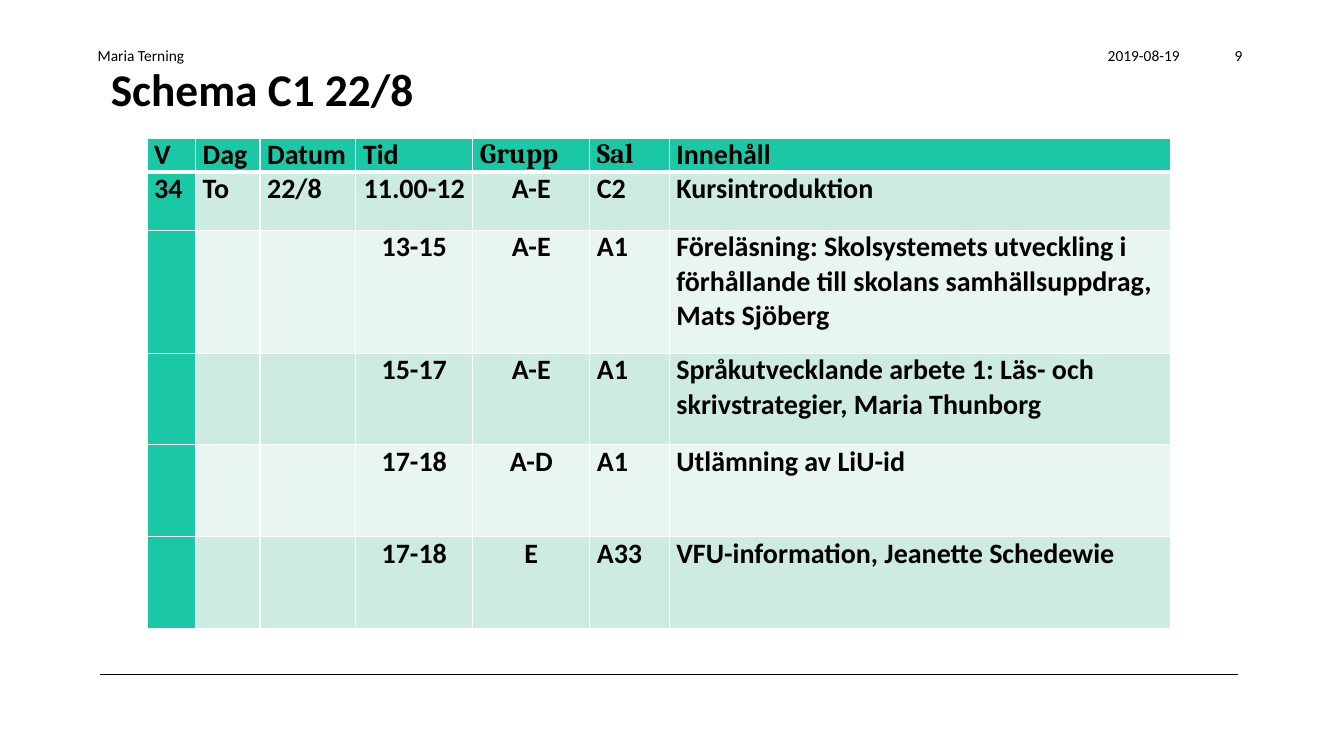
from lxml import etree
from pptx import Presentation
from pptx.dml.color import RGBColor
from pptx.enum.shapes import MSO_CONNECTOR
from pptx.enum.text import MSO_ANCHOR, PP_ALIGN
from pptx.oxml.ns import qn
from pptx.util import Inches, Pt

LEFT, CENTER, RIGHT = PP_ALIGN.LEFT, PP_ALIGN.CENTER, PP_ALIGN.RIGHT
MIDDLE = MSO_ANCHOR.MIDDLE
STRAIGHT = MSO_CONNECTOR.STRAIGHT

BLACK = RGBColor(0x00, 0x00, 0x00)
WHITE = RGBColor(0xFF, 0xFF, 0xFF)
TEAL = RGBColor(0x1B, 0xC8, 0xA6)
BANDS = (RGBColor(0xE8, 0xF5, 0xF1), RGBColor(0xCD, 0xEB, 0xE1))

BODY_FONT, ACCENT_FONT = "Calibri", "Cambria"
COLUMN_WIDTHS = (0.48, 0.64, 0.95, 1.16, 1.16, 0.79, 4.97)
ROW_HEIGHTS = (0.3, 0.58, 1.22, 0.91, 0.91, 0.91)
CENTERED_COLUMNS = (3, 4)
SCHEDULE = (
    ("V", "Dag", "Datum", "Tid", "Grupp", "Sal", "Innehåll"),
    ("34", "To", "22/8", "11.00-12", "A-E", "C2", "Kursintroduktion"),
    ("", "", "", "13-15", "A-E", "A1",
     "Föreläsning: Skolsystemets utveckling i förhållande till skolans "
     "samhällsuppdrag, Mats Sjöberg"),
    ("", "", "", "15-17", "A-E", "A1",
     "Språkutvecklande arbete 1: Läs- och skrivstrategier, Maria Thunborg"),
    ("", "", "", "17-18", "A-D", "A1", "Utlämning av LiU-id"),
    ("", "", "", "17-18", "E", "A33", "VFU-information, Jeanette Schedewie"),
)


def style_paragraph(paragraph, size, bold=False, align=LEFT, font_name=BODY_FONT):
    paragraph.alignment = align
    font = paragraph.font
    for target in (font, *(run.font for run in paragraph.runs)):
        target.name = font_name
        target.size = Pt(size)
        target.bold = bold
        target.color.rgb = BLACK


def add_text(slide, box, text, size, bold=False, align=LEFT):
    shape = slide.shapes.add_textbox(*(Inches(length) for length in box))
    frame = shape.text_frame
    frame.word_wrap = True
    frame.vertical_anchor = MIDDLE
    frame.text = text
    style_paragraph(frame.paragraphs[0], size, bold, align)


def add_header(slide, left, top, width, height):
    """Author on the left, date and page number on the right."""
    right = left + width
    add_text(slide, (left, top, 8.5, height), "Maria Terning", 11)
    add_text(slide, (right - 2.71, top, 2.09, height), "2019-08-19", 11, align=RIGHT)
    add_text(slide, (right - 0.81, top, 0.81, height), "9", 11, align=RIGHT)


def add_footer_rule(slide, left, top, width):
    rule = slide.shapes.add_connector(
        STRAIGHT, Inches(left), Inches(top), Inches(left + width), Inches(top))
    rule.line.color.rgb = BLACK
    rule.line.width = Pt(0.75)
    etree.SubElement(rule._element.spPr, qn("a:effectLst"))


def set_borders(cell, widths):
    """Draw white cell borders; the fill must be set afterwards."""
    properties = cell._tc.get_or_add_tcPr()
    for side, width in widths.items():
        border = etree.SubElement(properties, qn(f"a:ln{side}"), w=str(Pt(width)))
        fill = etree.SubElement(border, qn("a:solidFill"))
        etree.SubElement(fill, qn("a:srgbClr"), val=str(WHITE))


def fill_cell(cell, row, column, text):
    is_header = row == 0
    cell.margin_left = cell.margin_right = Inches(0.07)
    cell.margin_top = cell.margin_bottom = 0
    set_borders(cell, {"L": 1, "R": 1, "T": 3 if row == 1 else 1,
                       "B": 3 if is_header else 1})
    cell.fill.solid()
    cell.fill.fore_color.rgb = TEAL if is_header or column == 0 else BANDS[row % 2]
    cell.text_frame.text = text
    centered = column in CENTERED_COLUMNS and not is_header
    style_paragraph(cell.text_frame.paragraphs[0], 20, True,
                    CENTER if centered else LEFT,
                    ACCENT_FONT if text in ("Grupp", "Sal") else BODY_FONT)


def add_schedule(slide, left, top):
    frame = slide.shapes.add_table(
        len(ROW_HEIGHTS), len(COLUMN_WIDTHS), Inches(left), Inches(top),
        Inches(sum(COLUMN_WIDTHS)), Inches(sum(ROW_HEIGHTS)))
    table = frame.table
    for column, width in zip(table.columns, COLUMN_WIDTHS):
        column.width = Inches(width)
    for row, height in zip(table.rows, ROW_HEIGHTS):
        row.height = Inches(height)
    for row, texts in enumerate(SCHEDULE):
        for column, text in enumerate(texts):
            fill_cell(table.cell(row, column), row, column, text)


def main():
    presentation = Presentation()
    presentation.slide_width = Inches(13.33)
    presentation.slide_height = Inches(7.5)
    slide = presentation.slides.add_slide(presentation.slide_layouts[6])
    add_footer_rule(slide, 0.99, 6.69, 11.29)
    add_text(slide, (1, 0.54, 11.28, 0.68), "Schema C1 22/8", 32.4, bold=True)
    add_header(slide, 0.87, 0.4, 11.55, 0.29)
    add_schedule(slide, 1.46, 1.37)
    presentation.save("out.pptx")


if __name__ == "__main__":
    main()
